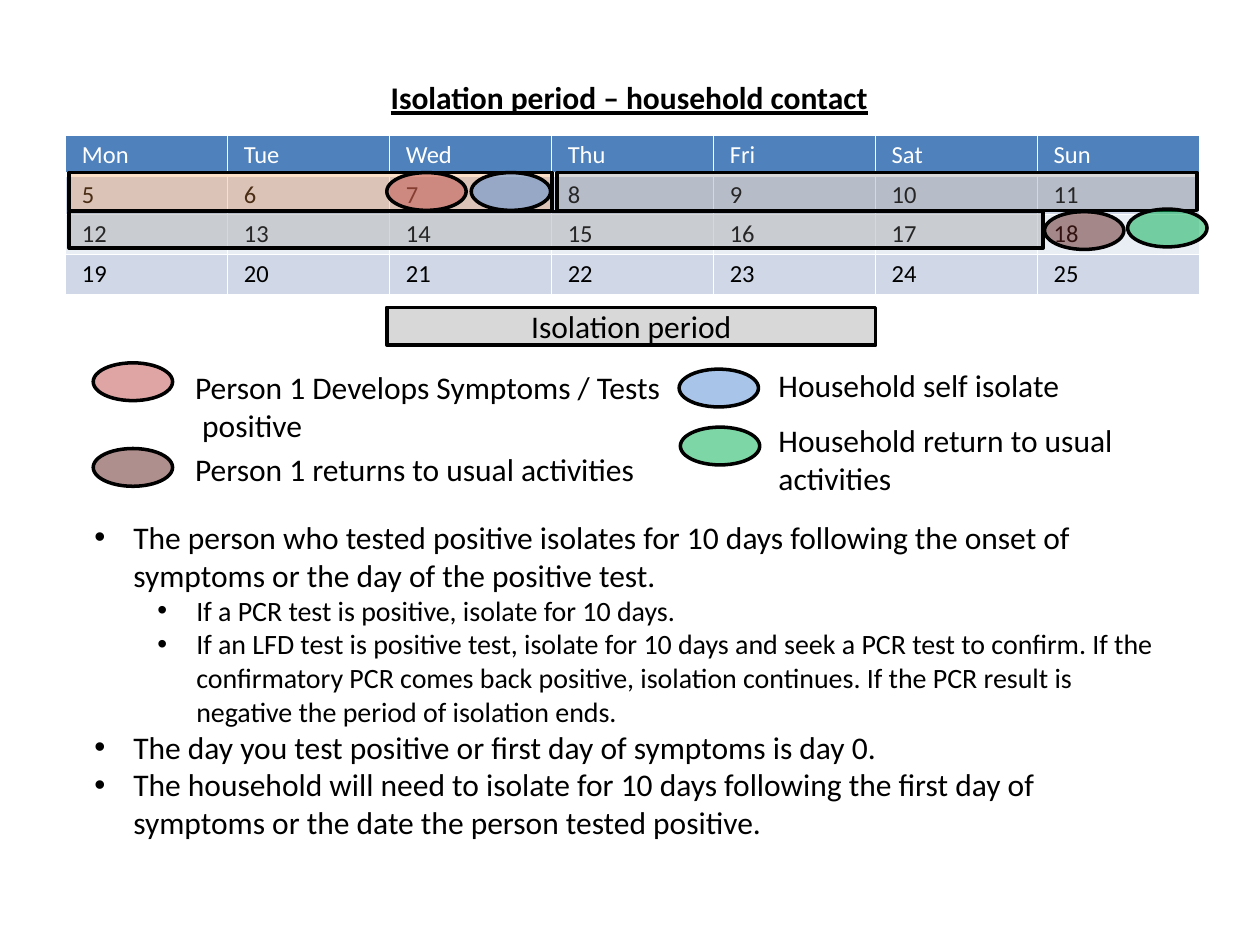
from dataclasses import dataclass

from lxml import etree
from pptx import Presentation
from pptx.dml.color import RGBColor
from pptx.enum.shapes import MSO_SHAPE
from pptx.enum.text import MSO_ANCHOR, PP_ALIGN
from pptx.oxml.ns import qn
from pptx.util import Inches, Pt

RECTANGLE, OVAL = MSO_SHAPE.RECTANGLE, MSO_SHAPE.OVAL
TOP, MIDDLE = MSO_ANCHOR.TOP, MSO_ANCHOR.MIDDLE
LEFT, CENTER = PP_ALIGN.LEFT, PP_ALIGN.CENTER


@dataclass(frozen=True)
class Theme:
    font: str = "Calibri"
    body: int = 18
    detail: int = 16
    calendar: int = 14
    ink: str = "000000"
    paper: str = "FFFFFF"
    header: str = "4F81BD"
    odd_week: str = "D0D8E8"
    even_week: str = "E9EDF4"
    isolation: str = "808080"
    waiting: str = "F79646"
    symptoms: str = "C0504D"
    household: str = "558ED5"
    person_return: str = "632523"
    household_return: str = "00B050"
    outline: int = 2
    period_opacity: int = 30
    event_opacity: int = 51


THEME = Theme()
MARKER_SIZE = (0.63, 0.3)
DAYS = ["Mon", "Tue", "Wed", "Thu", "Fri", "Sat", "Sun"]
FIRST_DATE = 5
WEEKS = 3

LEGEND = [
    (THEME.symptoms, (0.74, 2.88), (1.45, 2.87, 3.95, 0.71), True,
     ["Person 1 Develops Symptoms / Tests", " positive"]),
    (THEME.household_return, (5.4, 3.39), (6.08, 3.29, 3.54, 0.71), True,
     ["Household return to usual activities"]),
    (THEME.household, (5.39, 2.93), (6.08, 2.86, 2.46, 0.4), False,
     ["Household self isolate"]),
    (THEME.person_return, (0.74, 3.56), (1.45, 3.52, 3.79, 0.4), False,
     ["Person 1 returns to usual activities"]),
]
PERIODS = [
    (THEME.waiting, (0.55, 1.37, 3.83, 0.3)),
    (THEME.isolation, (0.55, 1.68, 7.73, 0.29)),
    (THEME.isolation, (4.42, 1.37, 5.08, 0.3)),
]
EVENTS = [
    (THEME.symptoms, (3.07, 1.37)),
    (THEME.household_return, (8.95, 1.66)),
    (THEME.household, (3.74, 1.37)),
    (THEME.person_return, (8.29, 1.68)),
]
GUIDANCE = [
    (0, "The person who tested positive isolates for 10 days following the onset of "
        "symptoms or the day of the positive test."),
    (1, "If a PCR test is positive, isolate for 10 days."),
    (1, "If an LFD test is positive test, isolate for 10 days and seek a PCR test to "
        "confirm. If the confirmatory PCR comes back positive, isolation continues. "
        "If the PCR result is negative the period of isolation ends."),
    (0, "The day you test positive or first day of symptoms is day 0."),
    (0, "The household will need to isolate for 10 days following the first day of "
        "symptoms or the date the person tested positive."),
]


def inches(values):
    return [Inches(value) for value in values]


def apply(target, values):
    for name, value in values.items():
        setattr(target, name, value)


class SlideBuilder:
    def __init__(self, theme, page):
        self.theme = theme
        self.page = page

    def add_span(self, para, text, size, color=None, **extra):
        span = para.add_run()
        span.text = text
        apply(span.font, {"name": self.theme.font, "size": Pt(size), **extra})
        span.font.color.rgb = RGBColor.from_string(color or self.theme.ink)

    def title(self, text, place):
        box = self.page.shapes.title
        apply(box, dict(zip(("left", "top", "width", "height"), inches(place))))
        apply(box.text_frame, {"word_wrap": False, "vertical_anchor": TOP})
        para = box.text_frame.paragraphs[0]
        para.alignment = CENTER
        self.add_span(para, text, self.theme.body, bold=True, underline=True)

    def text(self, lines, place, wrap=True):
        frame = self.page.shapes.add_textbox(*inches(place)).text_frame
        frame.word_wrap = wrap
        for index, line in enumerate(lines):
            para = frame.add_paragraph() if index else frame.paragraphs[0]
            para.alignment = LEFT
            self.add_span(para, line, self.theme.body)

    def bullets(self, items, place):
        frame = self.page.shapes.add_textbox(*inches(place)).text_frame
        frame.word_wrap = True
        for index, (level, text) in enumerate(items):
            para = frame.add_paragraph() if index else frame.paragraphs[0]
            para.level = level
            properties = para._p.get_or_add_pPr()
            properties.set("marL", str(Inches(0.31 + 0.5 * level)))
            properties.set("indent", str(Inches(-0.31)))
            etree.SubElement(properties, qn("a:buFont")).set("typeface", "Arial")
            etree.SubElement(properties, qn("a:buChar")).set("char", "•")
            self.add_span(para, text, self.theme.detail if level else self.theme.body)

    def shape(self, kind, place, color, opacity, text=None):
        box = self.page.shapes.add_shape(kind, *inches(place))
        box.shadow.inherit = False
        box.fill.solid()
        box.fill.fore_color.rgb = RGBColor.from_string(color)
        tint = box._element.spPr.find(qn("a:solidFill")).find(qn("a:srgbClr"))
        etree.SubElement(tint, qn("a:alpha")).set("val", str(opacity * 1000))
        box.line.color.rgb = RGBColor.from_string(self.theme.ink)
        box.line.width = Pt(self.theme.outline)
        if text:
            box.text_frame.vertical_anchor = MIDDLE
            para = box.text_frame.paragraphs[0]
            para.alignment = CENTER
            self.add_span(para, text, self.theme.body)

    def period(self, place, color, text=None):
        self.shape(RECTANGLE, place, color, self.theme.period_opacity, text)

    def marker(self, corner, color):
        self.shape(OVAL, (*corner, *MARKER_SIZE), color, self.theme.event_opacity)

    def border(self, cell, side, width):
        line = etree.SubElement(cell._tc.get_or_add_tcPr(), qn(f"a:ln{side}"))
        line.set("w", str(Pt(width)))
        fill = etree.SubElement(line, qn("a:solidFill"))
        etree.SubElement(fill, qn("a:srgbClr")).set("val", self.theme.paper)

    def calendar(self, rows, place):
        table = self.page.shapes.add_table(len(rows), len(rows[0]), *inches(place)).table
        apply(table, {"first_row": False, "horz_banding": False})
        margins = {"margin_left": Inches(0.13), "margin_right": Inches(0.13),
                   "margin_top": Inches(0.04), "margin_bottom": Inches(0.04)}
        for row, values in enumerate(rows):
            fill = (self.theme.odd_week if row % 2 else self.theme.even_week) if row else self.theme.header
            heavy_side = {0: "B", 1: "T"}.get(row)
            for column, value in enumerate(values):
                cell = table.cell(row, column)
                apply(cell, margins)
                for side in "LRTB":
                    self.border(cell, side, 3 if side == heavy_side else 1)
                cell.fill.solid()
                cell.fill.fore_color.rgb = RGBColor.from_string(fill)
                color = self.theme.ink if row else self.theme.paper
                self.add_span(cell.text_frame.paragraphs[0], value, self.theme.calendar,
                              color, bold=False)


def main():
    deck = Presentation()
    apply(deck, {"slide_width": Inches(10), "slide_height": Inches(7.5)})
    builder = SlideBuilder(THEME, deck.slides.add_slide(deck.slide_layouts[5]))

    weeks = [[str(FIRST_DATE + week * len(DAYS) + day) for day in range(len(DAYS))]
             for week in range(WEEKS)]
    builder.title("Isolation period – household contact", (2.96, 0.57, 4.07, 0.4))
    builder.calendar([DAYS, *weeks], (0.52, 1.07, 9, 1.23))
    builder.period((3.07, 2.44, 3.88, 0.3), THEME.isolation, "Isolation period")
    for color, corner, place, wrap, lines in LEGEND:
        builder.marker(corner, color)
        builder.text(lines, place, wrap)
    builder.bullets(GUIDANCE, (0.65, 4.06, 8.74, 2.69))
    for color, place in PERIODS:
        builder.period(place, color)
    for color, corner in EVENTS:
        builder.marker(corner, color)
    deck.save("out.pptx")


if __name__ == "__main__":
    main()
